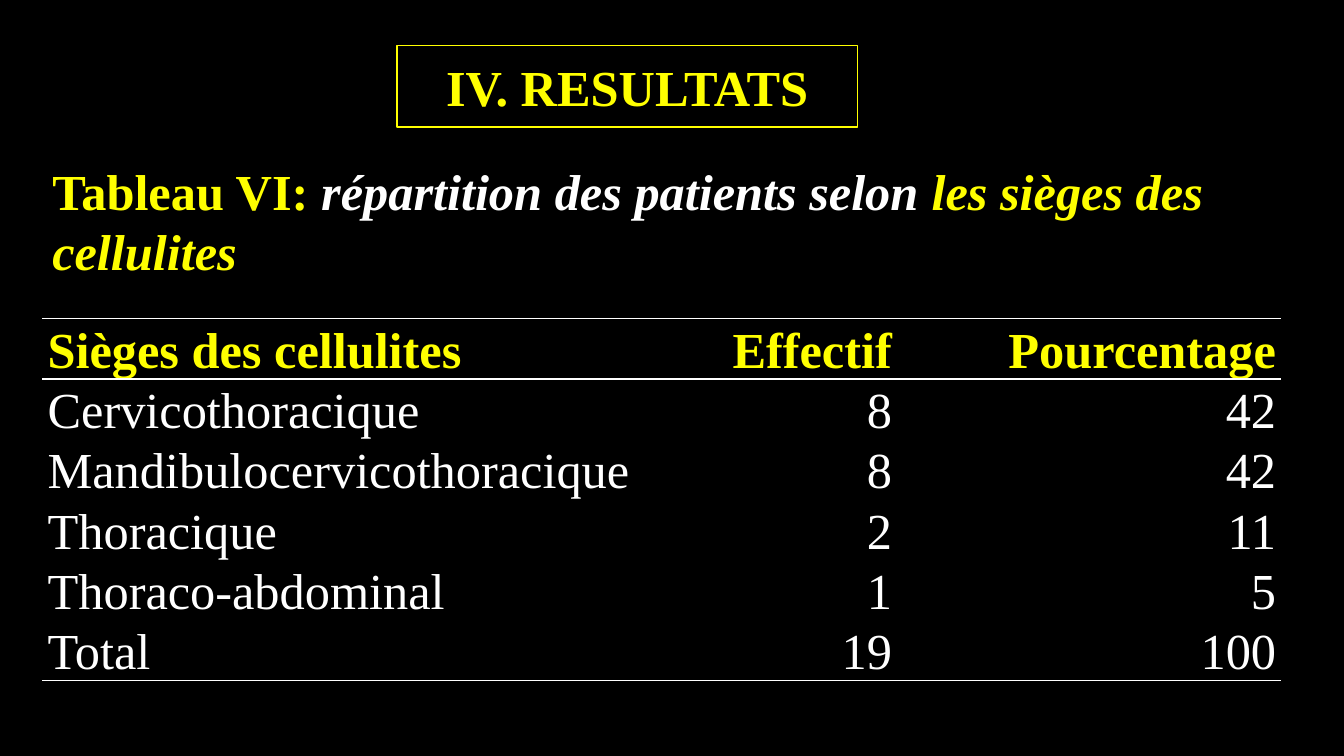
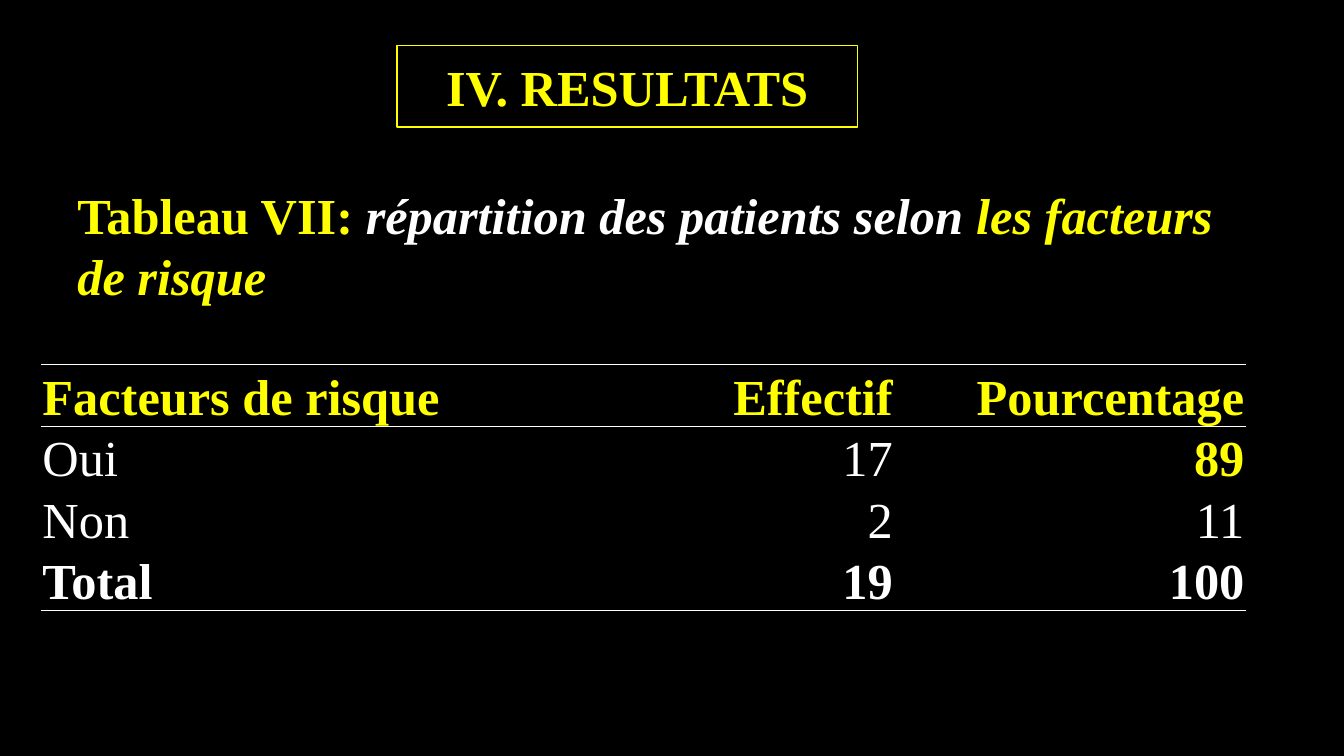
import pptx
import pptx.dml.color
import pptx.enum.text
import pptx.oxml
import pptx.oxml.ns
import pptx.util

Cm = pptx.util.Cm
Pt = pptx.util.Pt
RGBColor = pptx.dml.color.RGBColor
PP_ALIGN = pptx.enum.text.PP_ALIGN
MSO_ANCHOR = pptx.enum.text.MSO_ANCHOR
MSO_AUTO_SIZE = pptx.enum.text.MSO_AUTO_SIZE

BLACK = RGBColor(0x00, 0x00, 0x00)
WHITE = RGBColor(0xFF, 0xFF, 0xFF)
YELLOW = RGBColor(0xFF, 0xFF, 0x00)
FONT = "Times New Roman"
SIZE = Pt(36)
TITLE_BOX = (10, 1.14, 11.61, 2.06)


def add_run(p, text, color=WHITE, bold=False, italic=False):
    """Append formatted text to a paragraph."""
    r = p.add_run()
    r.text = text
    r.font.name = FONT
    r.font.size = SIZE
    r.font.color.rgb = color
    r.font.bold = bold
    r.font.italic = italic


def add_title(slide, box, text):
    sp = slide.shapes.title
    sp.left, sp.top, sp.width, sp.height = map(Cm, box)
    sp.line.color.rgb = YELLOW
    sp.line.width = Pt(1)
    tf = sp.text_frame
    tf.auto_size = MSO_AUTO_SIZE.NONE
    tf.vertical_anchor = MSO_ANCHOR.MIDDLE
    p = tf.paragraphs[0]
    p.alignment = PP_ALIGN.CENTER
    add_run(p, text, color=YELLOW, bold=True)


def add_caption(slide, box, number, subject):
    tf = slide.shapes.add_textbox(*map(Cm, box)).text_frame
    tf.word_wrap = True
    tf.auto_size = MSO_AUTO_SIZE.SHAPE_TO_FIT_TEXT
    p = tf.paragraphs[0]
    add_run(p, f"Tableau {number}: ", color=YELLOW, bold=True)
    add_run(p, "répartition des patients selon ", bold=True, italic=True)
    add_run(p, subject, color=YELLOW, bold=True, italic=True)


def set_borders(cell, ruled):
    """Draw white rules on the sides in ruled and clear the others."""
    tcPr = cell._tc.get_or_add_tcPr()
    for i, side in enumerate("LRTB"):
        fill = (f'<a:solidFill><a:srgbClr val="{WHITE}"/></a:solidFill>'
                if side in ruled else "<a:noFill/>")
        ln = pptx.oxml.parse_xml(
            f'<a:ln{side} {pptx.oxml.ns.nsdecls("a")} w="{Pt(1)}">{fill}</a:ln{side}>')
        tcPr.insert(i, ln)


def add_results_table(slide, left, top, col_widths, row_height, rows,
                      side_margin, top_margin=0, bold_cells=(), highlights=()):
    """Header ruled above and below, last row ruled below."""
    table = slide.shapes.add_table(
        len(rows), len(col_widths), Cm(left), Cm(top),
        Cm(sum(col_widths)), Cm(row_height * len(rows))).table
    table.first_row = table.horz_banding = False
    for col, width in zip(table.columns, col_widths):
        col.width = Cm(width)
    for i, values in enumerate(rows):
        table.rows[i].height = Cm(row_height)
        ruled = {0: "TB", 1: "T", len(rows) - 1: "B"}.get(i, "")
        for j, value in enumerate(values):
            cell = table.cell(i, j)
            cell.fill.background()
            set_borders(cell, ruled)
            cell.margin_left = cell.margin_right = Cm(side_margin)
            cell.margin_top, cell.margin_bottom = Cm(top_margin), 0
            cell.vertical_anchor = MSO_ANCHOR.BOTTOM
            p = cell.text_frame.paragraphs[0]
            p.alignment = PP_ALIGN.RIGHT if j else PP_ALIGN.LEFT
            marked = i == 0 or (i, j) in highlights
            add_run(p, value, color=YELLOW if marked else WHITE,
                    bold=marked or (i, j) in bold_cells)


def add_results_slide(prs, caption_box, number, subject, **table):
    slide = prs.slides.add_slide(prs.slide_layouts.get_by_name("Title Only"))
    add_title(slide, TITLE_BOX, "IV. RESULTATS")
    add_results_table(slide, **table)
    add_caption(slide, caption_box, number, subject)


def main():
    prs = pptx.Presentation()
    prs.slide_width, prs.slide_height = Cm(33.87), Cm(19.05)
    bg = prs.slide_master.background.fill
    bg.solid()
    bg.fore_color.rgb = BLACK

    # Sites of the cellulitis
    add_results_slide(
        prs, (1.07, 3.91, 32.21, 3.33), "VI", "les sièges des cellulites",
        left=1.07, top=8.03, col_widths=(15.8, 5.74, 9.68), row_height=1.52,
        side_margin=0.13,
        rows=[("Sièges des cellulites", "Effectif", "Pourcentage"),
              ("Cervicothoracique", "8", "42"),
              ("Mandibulocervicothoracique", "8", "42"),
              ("Thoracique", "2", "11"),
              ("Thoraco-abdominal", "1", "5"),
              ("Total", "19", "100")])

    # Risk factors
    add_results_slide(
        prs, (1.7, 4.52, 30.45, 3.33), "VII", "les facteurs de risque",
        left=1.04, top=9.19, col_widths=(14.96, 6.53, 8.86), row_height=1.55,
        side_margin=0.03, top_margin=0.03,
        bold_cells={(3, 0), (3, 1), (3, 2)}, highlights={(1, 2)},
        rows=[("Facteurs de risque", "Effectif", "Pourcentage"),
              ("Oui", "17", "89"),
              ("Non", "2", "11"),
              ("Total", "19", "100")])

    prs.save("out.pptx")


if __name__ == "__main__":
    main()
